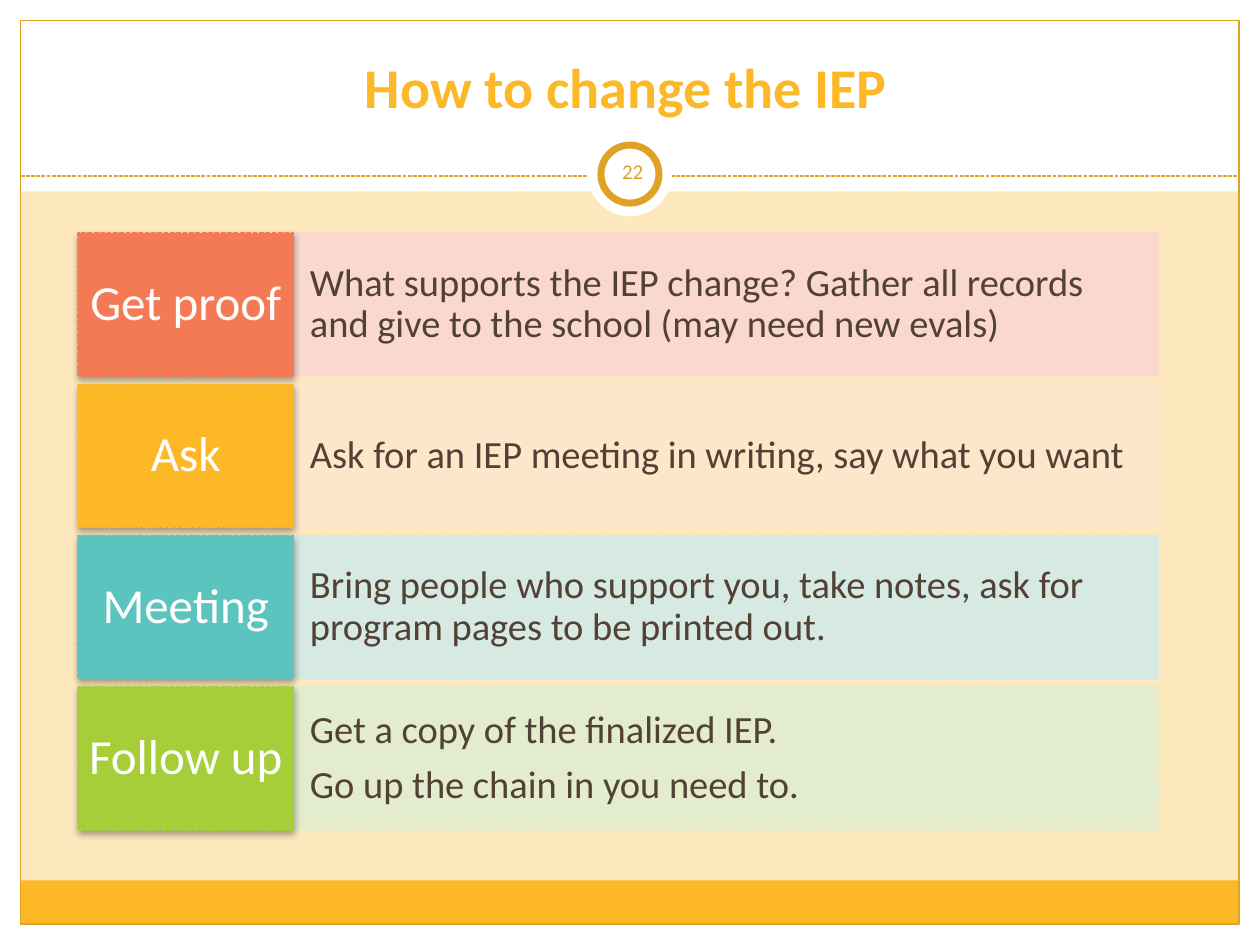
import lxml.etree
import pptx
import pptx.dml.color
import pptx.enum.dml
import pptx.enum.shapes
import pptx.enum.text
import pptx.oxml.ns
import pptx.util

Cm, Pt = pptx.util.Cm, pptx.util.Pt
ALIGN = pptx.enum.text.PP_ALIGN
ANCHOR = pptx.enum.text.MSO_ANCHOR
SHAPE = pptx.enum.shapes.MSO_SHAPE
DASH = pptx.enum.dml.MSO_LINE.SQUARE_DOT
qn = pptx.oxml.ns.qn

TITLE = "How to change the IEP"
SLIDE_NUMBER = "22"
STEPS = [
    ("Get proof", "coral", ["What supports the IEP change? Gather all records "
                            "and give to the school (may need new evals)"]),
    ("Ask", "gold", ["Ask for an IEP meeting in writing, say what you want"]),
    ("Meeting", "teal", ["Bring people who support you, take notes, ask for "
                         "program pages to be printed out."]),
    ("Follow up", "green", ["Get a copy of the finalized IEP.",
                            "Go up the chain in you need to."]),
]
COLORS = {
    "background": "FEE9BE", "white": "FFFFFF", "black": "000000",
    "gold": "FDB828", "dark gold": "DFA223", "brown": "524135",
    "coral": "F47A55", "teal": "5BC4BE", "green": "A6CE39",
    "pale coral": "FBD7D1", "pale gold": "FEE6CD",
    "pale teal": "D2EAE8", "pale green": "E1EDCE",
}
FONT = "Calibri"
WIDTH, HEIGHT, MARGIN = 25.4, 19.05, 0.42
HEADER_HEIGHT, DIVIDER_TOP = 3.86, 3.55
BADGE_CENTER = 4.06 * 0 + 3.51
STEP_LEFT, STEP_TOP, STEP_HEIGHT, STEP_PITCH = 1.57, 4.7, 2.88, 3.05
LABEL_WIDTH, BODY_WIDTH = 4.35, 17.43


def rgb(name):
    return pptx.dml.color.RGBColor.from_string(COLORS[name])


def add_block(slide, kind, box, fill=None, line=None, weight=0.75, dashed=False):
    shape = slide.shapes.add_shape(kind, *map(Cm, box))
    shape.shadow.inherit = False
    if fill:
        shape.fill.solid()
        shape.fill.fore_color.rgb = rgb(fill)
    else:
        shape.fill.background()
    if line:
        shape.line.color.rgb = rgb(line)
        shape.line.width = Pt(weight)
        if dashed:
            shape.line.dash_style = DASH
    else:
        shape.line.fill.background()
    return shape


def write(shape, paragraphs, size, color, insets, align=ALIGN.CENTER,
          anchor=ANCHOR.MIDDLE, bold=False, line_spacing=0.9):
    """Fill a shape with text; insets are left, top, right, bottom in cm."""
    frame = shape.text_frame
    frame.word_wrap = True
    frame.auto_size = pptx.enum.text.MSO_AUTO_SIZE.NONE
    frame.vertical_anchor = anchor
    (frame.margin_left, frame.margin_top,
     frame.margin_right, frame.margin_bottom) = map(Cm, insets)
    for index, text in enumerate(paragraphs):
        paragraph = frame.paragraphs[0] if index == 0 else frame.add_paragraph()
        paragraph.alignment = align
        paragraph.line_spacing = line_spacing
        paragraph.space_before = Pt(0)
        paragraph.space_after = Pt(round(size * 0.35, 1) if len(paragraphs) > 1 else 0)
        run = paragraph.add_run()
        run.text = text
        run.font.name = FONT
        run.font.size = Pt(size)
        run.font.bold = bold
        run.font.color.rgb = rgb(color)


def set_opacity(shape, percent):
    """Apply one opacity to both the fill and the line."""
    for color in shape.element.spPr.iter(qn("a:srgbClr")):
        lxml.etree.SubElement(color, qn("a:alpha"), val=str(percent * 1000))


def add_drop_shadow(shape):
    effects = shape.element.spPr.find(qn("a:effectLst"))
    shadow = lxml.etree.SubElement(
        effects, qn("a:outerShdw"), blurRad=str(Pt(4)), dist=str(Pt(2)),
        dir="5400000", algn="ctr", rotWithShape="0")
    color = lxml.etree.SubElement(shadow, qn("a:srgbClr"), val=COLORS["black"])
    lxml.etree.SubElement(color, qn("a:alpha"), val="35000")


def add_frame(slide):
    for box in [(0, HEIGHT - MARGIN, WIDTH, MARGIN),
                (0, 0, WIDTH, HEADER_HEIGHT),
                (0, 0, MARGIN, HEIGHT),
                (WIDTH - MARGIN, 0, MARGIN, HEIGHT)]:
        add_block(slide, SHAPE.RECTANGLE, box, "white")
    inner_width = WIDTH - 2 * MARGIN
    add_block(slide, SHAPE.RECTANGLE, (MARGIN, 17.75, inner_width, 0.87), "gold")
    add_block(slide, SHAPE.RECTANGLE,
              (MARGIN, MARGIN, inner_width, HEIGHT - 2 * MARGIN), line="dark gold")
    divider = slide.shapes.add_connector(
        pptx.enum.shapes.MSO_CONNECTOR.STRAIGHT,
        Cm(MARGIN), Cm(DIVIDER_TOP), Cm(WIDTH - MARGIN), Cm(DIVIDER_TOP))
    divider.line.color.rgb = rgb("dark gold")
    divider.line.width = Pt(0.75)
    divider.line.dash_style = DASH
    lxml.etree.SubElement(divider.element.spPr, qn("a:effectLst"))


def add_badge(slide):
    for diameter, line in [(1.7, None), (1.17, "dark gold")]:
        box = (WIDTH / 2 - diameter / 2, BADGE_CENTER - diameter / 2, diameter, diameter)
        add_block(slide, SHAPE.OVAL, box, "white", line, weight=4)
    number = slide.shapes.add_textbox(Cm(12.12), Cm(2.84), Cm(1.27), Cm(1.22))
    write(number, [SLIDE_NUMBER], 12, "dark gold", (0.13,) * 4, line_spacing=1.0)


def add_step(slide, index, label, color, sentences):
    top = STEP_TOP + index * STEP_PITCH
    pale = "pale " + color
    body = add_block(slide, SHAPE.RECTANGLE,
                     (STEP_LEFT + LABEL_WIDTH, top, BODY_WIDTH, STEP_HEIGHT),
                     pale, pale, 0.9, dashed=True)
    set_opacity(body, 90)
    write(body, sentences, 22, "brown", (0.33, 0.2, 0.33, 0.2), ALIGN.LEFT)
    tile = add_block(slide, SHAPE.RECTANGLE,
                     (STEP_LEFT, top, LABEL_WIDTH, STEP_HEIGHT),
                     color, color, 0.9, dashed=True)
    add_drop_shadow(tile)
    write(tile, [label], 28, "white", (0.1, 0.28, 0.1, 0.28))


def add_title(slide):
    title = slide.shapes.title
    title.left, title.top, title.width, title.height = map(Cm, (1.32, 0.25, 22.25, 2.29))
    write(title, [TITLE], 32, "gold", (0.53, 0.1, 0.18, 0.1),
          anchor=ANCHOR.BOTTOM, bold=True)
    title.element.getparent().append(title.element)  # in front of the white header


def main():
    presentation = pptx.Presentation()
    presentation.slide_width, presentation.slide_height = Cm(WIDTH), Cm(HEIGHT)
    slide = presentation.slides.add_slide(presentation.slide_layouts[5])
    slide.background.fill.solid()
    slide.background.fill.fore_color.rgb = rgb("background")
    add_frame(slide)
    add_title(slide)
    for index, step in enumerate(STEPS):
        add_step(slide, index, *step)
    add_badge(slide)
    presentation.save("out.pptx")


if __name__ == "__main__":
    main()
